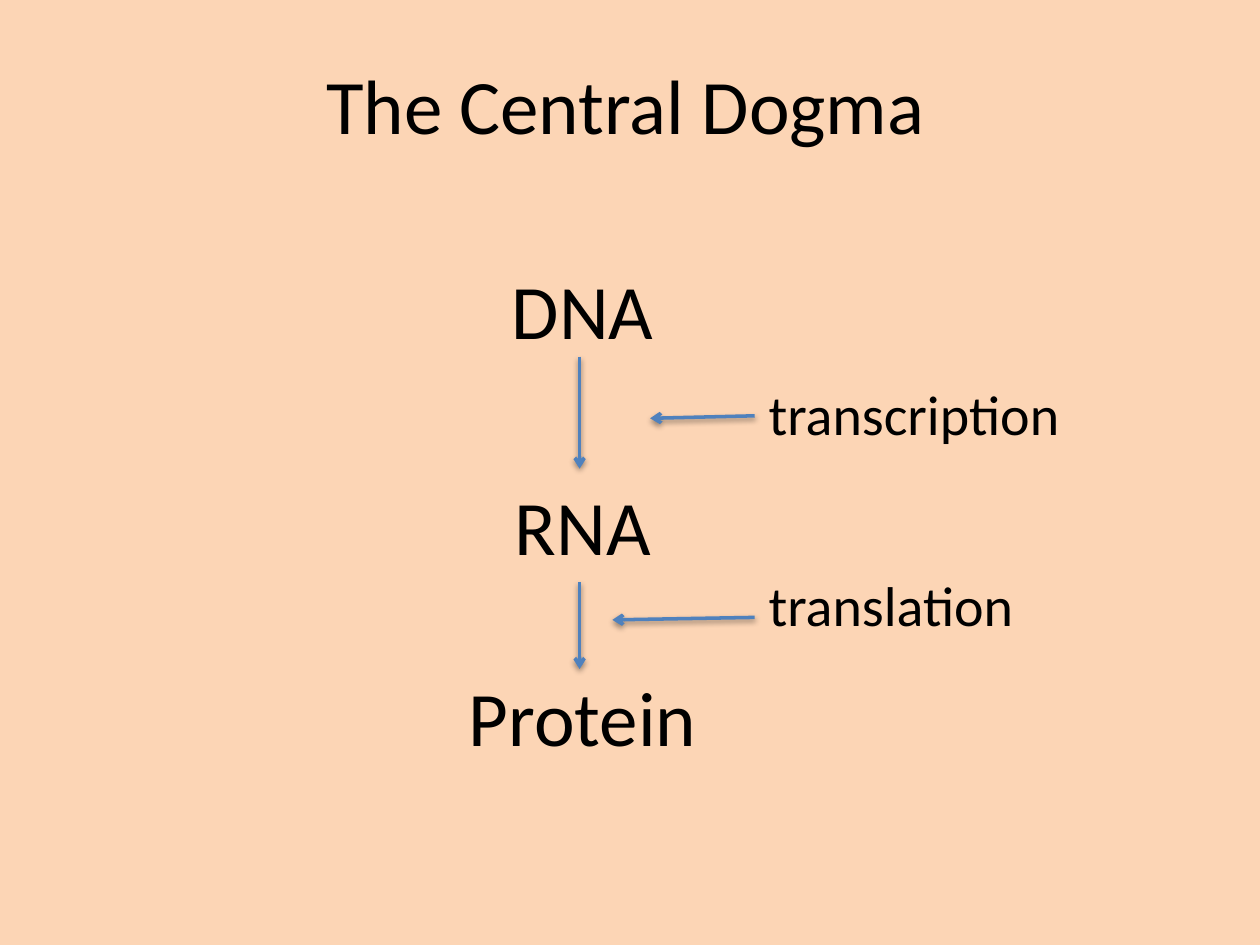
from lxml.etree import SubElement
from pptx import Presentation
from pptx.dml.color import RGBColor
from pptx.enum.shapes import MSO_CONNECTOR as Line
from pptx.enum.text import MSO_ANCHOR as Anchor, MSO_AUTO_SIZE as Fit, PP_ALIGN as Align
from pptx.oxml import parse_xml
from pptx.oxml.ns import nsdecls, qn
from pptx.util import Inches, Pt

PEACH = RGBColor(0xFC, 0xD5, 0xB5)
BLACK = RGBColor(0, 0, 0)
BLUE = RGBColor(0x4F, 0x81, 0xBD)
FONT = "Calibri"
BIG, SMALL = 44, 32

TITLE = "The Central Dogma"
# text, is a process label, space before in points
STEPS = [
    ("DNA", False, 0),
    ("transcription", True, 14.5),
    ("RNA", False, 0),
    ("translation", True, 0),
    ("Protein", False, 0),
]
LABEL_INDENT = 6
FLOW_X, LABEL_X = 4.6, 5.99
# start and end of each arrow
ARROWS = [
    ((FLOW_X, 2.83), (FLOW_X, 3.72)),
    ((FLOW_X, 4.62), (FLOW_X, 5.31)),
    ((LABEL_X, 3.3), (5.16, 3.32)),
    ((LABEL_X, 4.9), (4.86, 4.92)),
]
SHADOW = f"""<a:effectLst {nsdecls('a')}>
  <a:outerShdw blurRad="40000" dist="20000" dir="5400000" rotWithShape="0">
    <a:srgbClr val="000000"><a:alpha val="38000"/></a:srgbClr>
  </a:outerShdw>
</a:effectLst>"""


def place(shape, *box):
    shape.left, shape.top, shape.width, shape.height = map(Inches, box)
    frame = shape.text_frame
    frame.word_wrap = True
    frame.auto_size = Fit.SHAPE_TO_FIT_TEXT
    frame.vertical_anchor = Anchor.TOP
    return frame


def write(para, text, size):
    run = para.add_run()
    run.text = text
    run.font.name = FONT
    run.font.size = Pt(size)
    run.font.color.rgb = BLACK


def add_step(para, text, label, before):
    para.alignment = Align.LEFT if label else Align.CENTER
    para.space_before = Pt(before)
    para.space_after = Pt(18 if label else 0)
    props = para._p.get_or_add_pPr()
    props.set("marL", str(Inches(LABEL_INDENT if label else 0)))
    props.set("indent", "0")
    SubElement(props, qn("a:buNone"))
    write(para, text, SMALL if label else BIG)


def add_arrow(slide, start, end):
    ends = [Inches(n) for n in start + end]
    arrow = slide.shapes.add_connector(Line.STRAIGHT, *ends)
    arrow.line.color.rgb = BLUE
    arrow.line.width = Pt(2)
    SubElement(arrow.line._get_or_add_ln(), qn("a:tailEnd"), type="arrow")
    arrow._element.spPr.append(parse_xml(SHADOW))


def main():
    deck = Presentation()
    deck.slide_width, deck.slide_height = Inches(10), Inches(7.5)
    slide = deck.slides.add_slide(deck.slide_layouts[1])
    slide.background.fill.solid()
    slide.background.fill.fore_color.rgb = PEACH

    title, body = slide.placeholders
    head = place(title, 0.34, 0.41, 9.25, 0.84).paragraphs[0]
    head.alignment = Align.CENTER
    write(head, TITLE, BIG)

    frame = place(body, 0, 2.03, 9.25, 4.11)
    for i, step in enumerate(STEPS):
        add_step(frame.add_paragraph() if i else frame.paragraphs[0], *step)

    for start, end in ARROWS:
        add_arrow(slide, start, end)
    deck.save("out.pptx")


if __name__ == "__main__":
    main()
